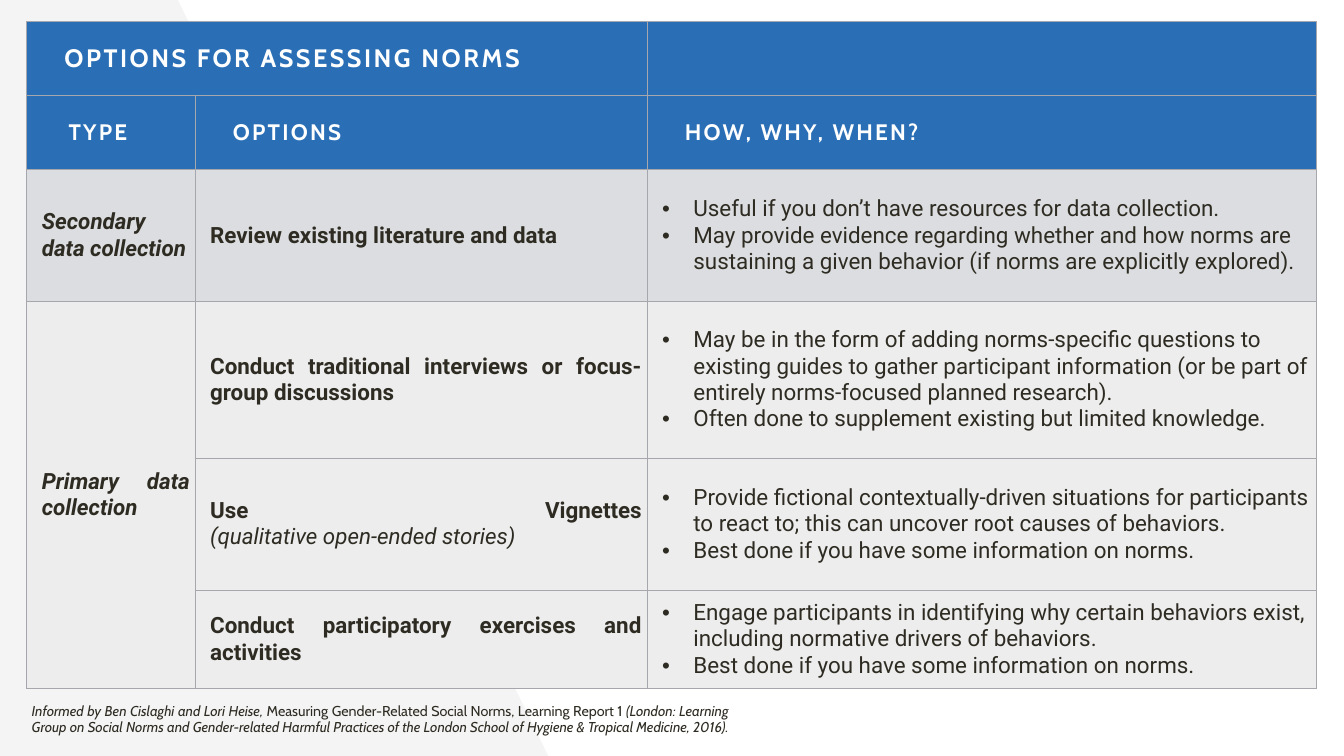
from lxml.etree import SubElement
from pptx import Presentation
from pptx.dml.color import RGBColor
from pptx.enum.text import MSO_ANCHOR, MSO_AUTO_SIZE, PP_ALIGN
from pptx.oxml.ns import qn
from pptx.util import Emu, Pt

# Content
TITLE = "OPTIONS FOR ASSESSING NORMS"
HEADINGS = ["TYPE", "OPTIONS", "HOW, WHY, WHEN?"]
BEST_DONE = "Best done if you have some information on norms."
SECONDARY = [
    ("Secondary data collection", ["Review existing literature and data"], [
        "Useful if you don’t have resources for data collection.",
        "May provide evidence regarding whether and how norms are sustaining "
        "a given behavior (if norms are explicitly explored)."]),
]
PRIMARY = [
    ("Primary data collection",
     ["Conduct traditional interviews or focus-group discussions"], [
         "May be in the form of adding norms-specific questions to existing guides to gather "
         "participant information (or be part of entirely norms-focused planned research).",
         "Often done to supplement existing but limited knowledge."]),
    (None, ["Use Vignettes", "(qualitative open-ended stories)"], [
        "Provide fictional contextually-driven situations for participants to react to; "
        "this can uncover root causes of behaviors.", BEST_DONE]),
    (None, ["Conduct participatory exercises and activities"], [
        "Engage participants in identifying why certain behaviors exist, "
        "including normative drivers of behaviors.", BEST_DONE]),
]
SOURCE = [  # text, italic
    ("Informed by Ben Cislaghi and Lori Heise, ", True),
    ("Measuring Gender-Related Social Norms, Learning Report 1", False),
    (" (London: Learning Group on Social Norms and Gender-related Harmful Practices of the "
     "London School of Hygiene & Tropical Medicine, 2016).", True),
]
COLORS = {"header": "2A6FB6", "secondary": "DCDDE0", "primary": "EDEDEE",
          "border": "A6A7AC", "ink": "2E2C22", "white": "FFFFFF", "backdrop": "393941"}

# Layout, 100 px to the inch
PX = 9144
LEFT, TOP = 53, 43
COLUMNS = [334, 897, 1329]
HEADER_ROWS = [146, 147, 262]
PRIMARY_ROWS = [312, 262, 195]
HEADER_MARGINS = (30, 0, 15, 0)
BODY_MARGINS = (30, 5, 10, 5)


def px(length):
    return Emu(length * PX)


def color(name):
    return RGBColor.from_string(COLORS[name])


def set_margins(target, margins):
    target.margin_left, target.margin_top, target.margin_right, target.margin_bottom = map(px, margins)


def set_font(para, face, size, ink, bold=None, italic=None):
    font = para.font
    font.name, font.size, font.bold, font.italic = face, Pt(size), bold, italic
    font.color.rgb = color(ink)


def indent(para, left, first, bullet=False):
    props = para._p.get_or_add_pPr()
    props.set("marL", str(px(left)))
    props.set("indent", str(px(first)))
    if bullet:
        SubElement(props, qn("a:buFont"), typeface="Arial")
        SubElement(props, qn("a:buChar"), char="•")


def style_cell(cell, fill, margins):
    props = cell._tc.get_or_add_tcPr()
    for side in ("lnL", "lnR", "lnT", "lnB"):
        line = SubElement(props, qn(f"a:{side}"), w=str(Pt(1)))
        paint = SubElement(line, qn("a:solidFill"))
        SubElement(paint, qn("a:srgbClr"), val=COLORS["border"])
    cell.fill.solid()
    cell.fill.fore_color.rgb = color(fill)
    cell.vertical_anchor = MSO_ANCHOR.MIDDLE
    set_margins(cell, margins)


def add_grid(page, top, rows):
    shape = page.shapes.add_table(len(rows), len(COLUMNS), px(LEFT), px(top),
                                  px(sum(COLUMNS)), px(sum(rows)))
    grid = shape.table
    grid.first_row = grid.horz_banding = False
    for column, width in zip(grid.columns, COLUMNS):
        column.width = px(width)
    for row, height in zip(grid.rows, rows):
        row.height = px(height)
    return grid


def write_header(cell, text, size, left, first, spacing):
    para = cell.text_frame.paragraphs[0]
    para.alignment = PP_ALIGN.JUSTIFY
    indent(para, left, first)
    set_font(para, "Cabin", size, "white", bold=True)
    span = para.add_run()
    span.text = text
    span._r.get_or_add_rPr().set("spc", str(spacing))


def write_options(cell, lines):
    para = cell.text_frame.paragraphs[0]
    para.alignment = PP_ALIGN.JUSTIFY
    set_font(para, "Roboto", 32, "ink")
    for number, line in enumerate(lines):
        if number:
            para.add_line_break()
        span = para.add_run()
        span.text = line
        span.font.bold, span.font.italic = number == 0, number > 0


def write_bullets(cell, items):
    frame = cell.text_frame
    for number, item in enumerate(items):
        para = frame.add_paragraph() if number else frame.paragraphs[0]
        indent(para, 62, -62, bullet=True)
        set_font(para, "Roboto", 32, "ink", bold=False)
        para.add_run().text = item


def fill_rows(grid, first_row, entries, fill):
    for row, (kind, options, reasons) in enumerate(entries, first_row):
        cells = [grid.cell(row, column) for column in range(len(COLUMNS))]
        for cell in cells:
            style_cell(cell, fill, BODY_MARGINS)
        if kind:
            para = cells[0].text_frame.paragraphs[0]
            para.alignment = PP_ALIGN.JUSTIFY
            set_font(para, "Roboto", 32, "ink", bold=True, italic=True)
            para.add_run().text = kind
        write_options(cells[1], options)
        write_bullets(cells[2], reasons)


def main():
    deck = Presentation()
    deck.slide_width, deck.slide_height = px(2667), px(1500)
    page = deck.slides.add_slide(deck.slide_layouts[2])
    title, note = page.placeholders
    title.element.getparent().remove(title.element)

    # Slanted backdrop, behind everything
    builder = page.shapes.build_freeform(0, 0, scale=PX)
    builder.add_line_segments([(353, 0), (1089, 1502), (0, 1502)], close=True)
    backdrop = builder.convert_to_shape()
    backdrop.shadow.inherit = False
    backdrop.line.fill.background()
    backdrop.fill.solid()
    backdrop.fill.fore_color.rgb = color("backdrop")
    tint = backdrop.element.spPr.find(f".//{qn('a:srgbClr')}")
    SubElement(tint, qn("a:alpha"), val="5000")
    note.element.addprevious(backdrop.element)

    # Source note
    note.left, note.top, note.width, note.height = px(LEFT), px(1393), px(1403), px(80)
    frame = note.text_frame
    frame.word_wrap, frame.auto_size = True, MSO_AUTO_SIZE.NONE
    frame.vertical_anchor = MSO_ANCHOR.TOP
    set_margins(frame, (10, 5, 10, 5))
    para = frame.paragraphs[0]
    para.alignment, para.line_spacing, para.space_before = PP_ALIGN.JUSTIFY, 0.9, Pt(0)
    set_font(para, "Cabin", 20.4, "ink")
    for text, italic in SOURCE:
        span = para.add_run()
        span.text, span.font.italic = text, italic

    # Header rows and secondary data
    grid = add_grid(page, TOP, HEADER_ROWS)
    for row in range(2):
        for column in range(len(COLUMNS)):
            style_cell(grid.cell(row, column), "header", HEADER_MARGINS)
    grid.cell(0, 0).merge(grid.cell(0, 1))
    write_header(grid.cell(0, 0), TITLE, 36, 45, 0, 360)
    for column, heading in enumerate(HEADINGS):
        write_header(grid.cell(1, column), heading, 32, 0, 45 if column else 53, 320)
    fill_rows(grid, 2, SECONDARY, "secondary")

    # Primary data
    grid = add_grid(page, TOP + sum(HEADER_ROWS) - 1, PRIMARY_ROWS)
    fill_rows(grid, 0, PRIMARY, "primary")
    grid.cell(0, 0).merge(grid.cell(2, 0))

    deck.save("out.pptx")


if __name__ == "__main__":
    main()
